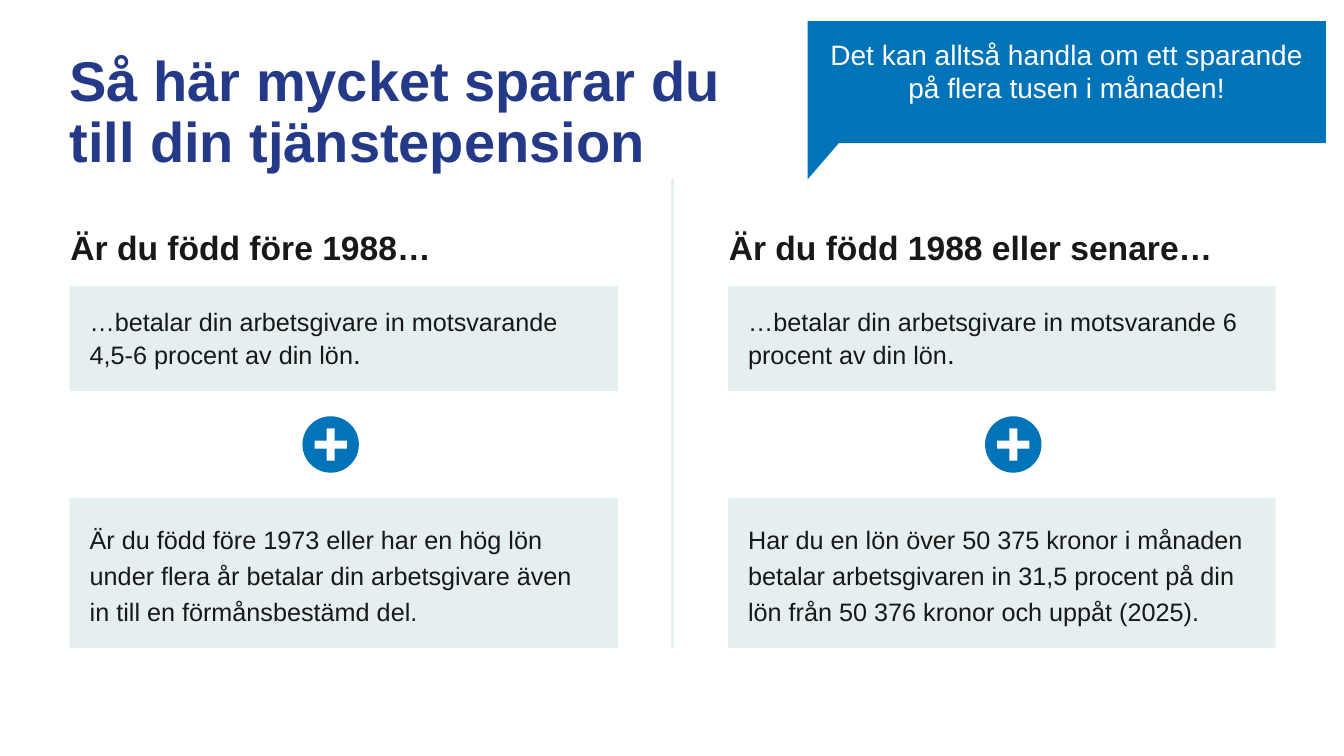
from dataclasses import dataclass

from pptx import Presentation
from pptx.dml.color import RGBColor
from pptx.enum.shapes import MSO_CONNECTOR as Line, MSO_SHAPE as Preset
from pptx.enum.text import MSO_ANCHOR as Anchor, PP_ALIGN as Align
from pptx.oxml.ns import qn
from pptx.util import Pt
from lxml.etree import SubElement

PX = 9144


@dataclass(frozen=True)
class Theme:
    font: str = "Arial"
    title: str = "243987"
    ink: str = "181818"
    accent: str = "0173B8"
    panel: str = "E5EFF0"
    white: str = "FFFFFF"
    title_size: int = 40
    heading_size: int = 24
    callout_size: int = 20
    body_size: int = 18


class SlideBuilder:
    """Draws themed elements on one slide, with lengths in px of 1/100 inch."""

    def __init__(self, slide, theme):
        self.shapes = slide.shapes
        self.theme = theme

    def paint(self, shape, color):
        shape.shadow.inherit = False
        shape.fill.solid()
        shape.fill.fore_color.rgb = RGBColor.from_string(color)
        shape.line.fill.background()
        return shape

    def set_text(self, shape, runs, color, bold=False, insets=(0, 0, 0, 0),
                 anchor=Anchor.TOP, wrap=True, spacing=1.0, align=Align.LEFT):
        frame = shape.text_frame
        left, top, right, bottom = (inset * PX for inset in insets)
        frame_format = {"margin_left": left, "margin_top": top, "margin_right": right,
                        "margin_bottom": bottom, "vertical_anchor": anchor, "word_wrap": wrap}
        for name, value in frame_format.items():
            setattr(frame, name, value)
        paragraph = frame.paragraphs[0]
        paragraph.alignment, paragraph.line_spacing = align, spacing
        for words, size in runs:
            if words.startswith("\v"):
                paragraph.add_line_break()
            run = paragraph.add_run()
            run.text = words.lstrip("\v")
            font_format = {"name": self.theme.font, "size": Pt(size), "bold": bold}
            for name, value in font_format.items():
                setattr(run.font, name, value)
            run.font.color.rgb = RGBColor.from_string(color)

    def text(self, box, runs, color, **style):
        self.set_text(self.shapes.add_textbox(*(n * PX for n in box)), runs, color, **style)

    def preset(self, kind, box, color, parent=None):
        shapes = parent.shapes if parent is not None else self.shapes
        return self.paint(shapes.add_shape(kind, *(n * PX for n in box)), color)

    def panel(self, box, runs, spacing=1.0):
        panel = self.preset(Preset.RECTANGLE, box, self.theme.panel)
        self.set_text(panel, runs, self.theme.ink, insets=(20, 20, 20, 20), spacing=spacing)

    def plus(self, x, y):
        badge = self.shapes.add_group_shape()
        for kind, width, height, color in (
            (Preset.OVAL, 56, 56, self.theme.accent),
            (Preset.RECTANGLE, 8, 32, self.theme.white),
            (Preset.RECTANGLE, 32, 8, self.theme.white),
        ):
            box = (x - width // 2, y - height // 2, width, height)
            self.preset(kind, box, color, badge)

    def callout(self, points, runs):
        outline = self.shapes.build_freeform(*points[0], scale=PX)
        outline.add_line_segments(points[1:], close=True)
        bubble = self.paint(outline.convert_to_shape(), self.theme.accent)
        self.set_text(bubble, runs, self.theme.white, insets=(10, 16, 10, 5),
                      align=Align.CENTER)

    def divider(self, x, top, bottom):
        line = self.shapes.add_connector(Line.STRAIGHT, x * PX, top * PX, x * PX, bottom * PX)
        line.line.color.rgb = RGBColor.from_string(self.theme.panel)
        line.line.width = Pt(2)
        SubElement(line._element.spPr, qn("a:effectLst"))


def main():
    theme = Theme()
    deck = Presentation()
    deck.slide_width, deck.slide_height = 1333 * PX, 750 * PX
    page = SlideBuilder(deck.slides.add_slide(deck.slide_layouts[6]), theme)

    page.text((69, 40, 700, 146),
              [("Så här mycket sparar du", theme.title_size),
               ("\vtill din tjänstepension", theme.title_size)],
              theme.title, bold=True, anchor=Anchor.MIDDLE, spacing=0.9)

    columns = (
        (69, 544, 390, 328, "Är du född före 1988…",
         "…betalar din arbetsgivare in motsvarande 4,5-6 procent av din lön",
         "Är du född före 1973 eller har en hög lön under flera år betalar din "
         "arbetsgivare även in till en förmånsbestämd del."),
        (722, 543, 514, 1005, "Är du född 1988 eller senare…",
         "…betalar din arbetsgivare in motsvarande 6 procent av din lön",
         "Har du en lön över 50 375 kronor i månaden betalar arbetsgivaren in "
         "31,5 procent på din lön från 50 376 kronor och uppåt (2025)."),
    )
    for left, width, heading_width, plus_x, heading, base, extra in columns:
        page.text((left - 9, 220, heading_width, 50), [(heading, theme.heading_size)],
                  theme.ink, bold=True, insets=(10, 5, 10, 5), wrap=False)
        page.panel((left, 284, width, 104),
                   [(base, theme.body_size), (".", theme.callout_size)])
        page.plus(plus_x, 441)
        page.panel((left, 494, width, 149), [(extra, theme.body_size)], spacing=1.2)

    page.callout([(801, 21), (1315, 21), (1315, 142), (832, 142), (801, 178)],
                 [("Det kan alltså handla om ett sparande på flera tusen i månaden!",
                   theme.callout_size)])
    page.divider(667, 178, 643)
    deck.save("out.pptx")


if __name__ == "__main__":
    main()
